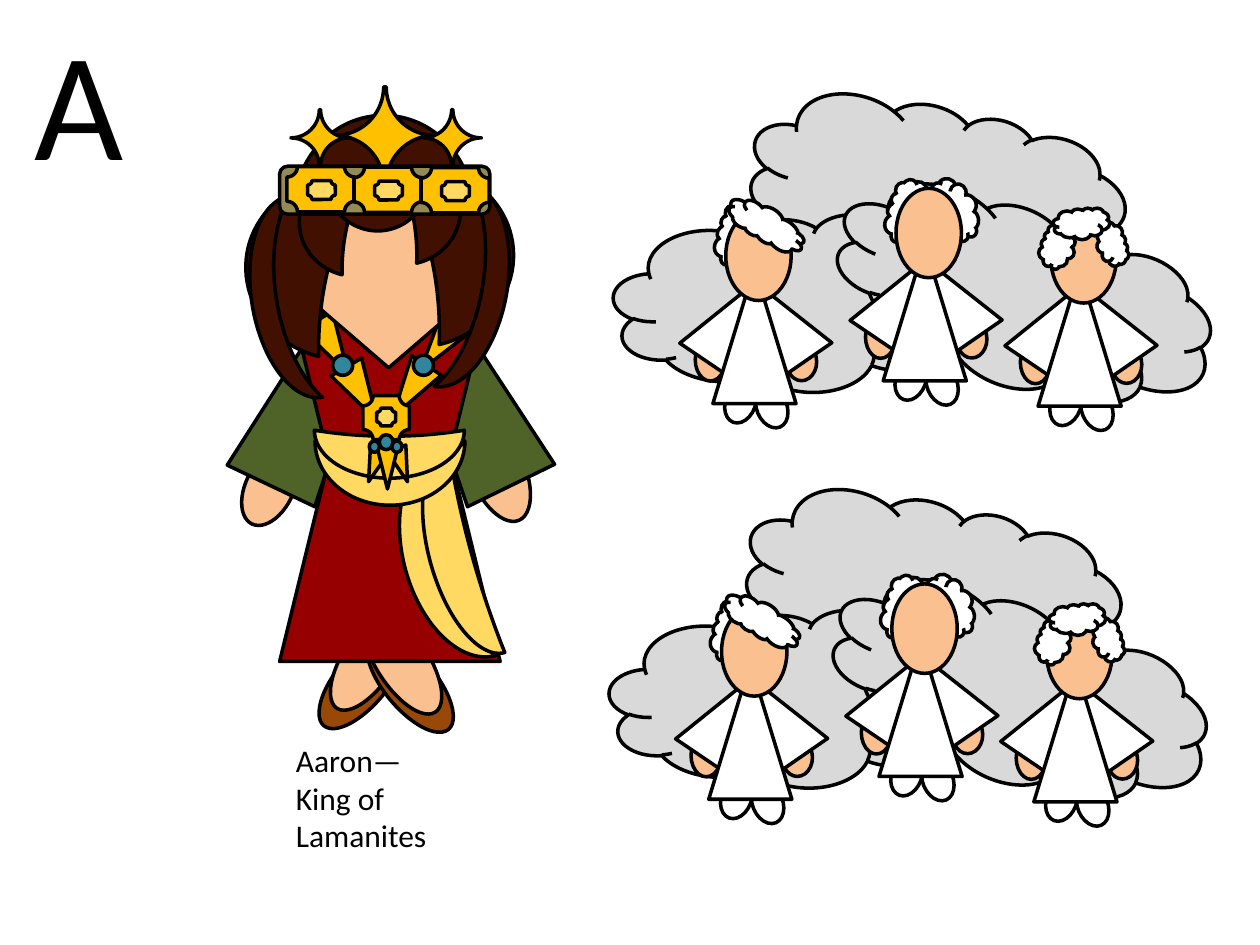
from pptx import Presentation
from pptx import util as u
from pptx.dml.color import RGBColor
from pptx.enum import shapes, text

M = shapes.MSO_SHAPE
OVAL, MOON, CLOUD, PLAQUE = M.OVAL, M.MOON, M.CLOUD, M.PLAQUE
TRAPEZOID, TRIANGLE = M.TRAPEZOID, M.ISOSCELES_TRIANGLE
BLACK, WHITE, GREY, SKIN = "000000", "FFFFFF", "D9D9D9", "FAC090"
HAIR, GOLD, PALE_GOLD, BRONZE = "411001", "FFC000", "FFD961", "948A54"
RED, GREEN, BROWN, BLUE = "960000", "4F6228", "984807", "31859C"

# Each part: shape, colour, left, top, width, height, rotation, adjustment, flipped
LIMBS = [
    (OVAL, SKIN, 131, 265, 46, 27.4, 116),
    (OVAL, BROWN, 172.8, 373.7, 68.4, 29.5, 309.8, None, True),
    (OVAL, SKIN, 177.1, 361.4, 68.4, 29.5, 303.3, None, True),
    (OVAL, BROWN, 200.2, 375.8, 68.4, 29.5, 50.2),
    (OVAL, SKIN, 195.8, 363.6, 68.4, 29.5, 56.7),
    (OVAL, SKIN, 253.4, 253.4, 61.9, 31, 66.7),
]
ROBE = [
    (TRAPEZOID, GREEN, 240.5, 174.2, 55.4, 108.7, 334, 0.248),
    (TRAPEZOID, GREEN, 150.5, 174.2, 55.4, 108.7, 25.4, 0.248),
    (TRAPEZOID, RED, 167.8, 180, 108.7, 79.2, 180, 0.244),
    (TRAPEZOID, RED, 159.8, 257.8, 126, 120.2, 0, 0.244),
]
SASH = [
    (MOON, PALE_GOLD, 231.1, 259.9, 36.7, 121.7, 344.7),
    (MOON, PALE_GOLD, 245.5, 257, 27.4, 121.7, 344.7, 0.875),
    (MOON, PALE_GOLD, 204.5, 227.5, 36.7, 85.7, 270),
    (MOON, PALE_GOLD, 208.8, 216.7, 27.4, 85.7, 270, 0.875),
]
NECKLACE = [
    (TRIANGLE, GOLD, 180, 180.7, 20.2, 35.3, 150),
    (TRIANGLE, GOLD, 196.6, 207.4, 20.2, 35.3, 150),
    (TRIANGLE, GOLD, 240.5, 180, 20.2, 35.3, 216.3),
    (TRIANGLE, GOLD, 223.9, 205.9, 20.2, 35.3, 213.4),
    (PLAQUE, GOLD, 207.4, 226.1, 26.6, 25.2, 0, 0.232),
    (TRIANGLE, GOLD, 208.1, 255.6, 11.5, 20.2, 198.9),
    (TRIANGLE, GOLD, 223.9, 255.6, 11.5, 20.2, 161.5),
    (TRIANGLE, GOLD, 215.3, 254.9, 12.2, 24.5, 180),
    (OVAL, BLUE, 190.1, 203, 11.5, 11.5),
    (OVAL, BLUE, 236.2, 203, 11.5, 11.5),
    (OVAL, BLUE, 216.7, 248.4, 7.9, 8.6),
    (OVAL, BLUE, 211, 252, 5.8, 6.5),
    (OVAL, BLUE, 223.9, 252, 5.8, 6.5),
    (PLAQUE, PALE_GOLD, 215.3, 233.3, 10.8, 10.1, 0, 0.232),
]
FACE_AND_HAIR = [
    (M.REGULAR_PENTAGON, SKIN, 174.2, 102.2, 95.8, 108, 180),
    (MOON, HAIR, 239, 90, 54, 102.2, 347.2, 0.875, True),
    (MOON, HAIR, 258.5, 108, 31, 116.6, 10.5, 0.457, True),
    (MOON, HAIR, 231.1, 87.8, 31.7, 59.8, 347.2, 0.875, True),
    (MOON, HAIR, 141.1, 96.5, 54, 102.2, 13.8, 0.875),
    (MOON, HAIR, 144, 113.8, 31, 116.6, 350.5, 0.457),
    (MOON, HAIR, 171.4, 94.3, 31.7, 59.8, 13.8, 0.875),
    (MOON, HAIR, 192.2, 41.8, 54, 102.2, 90, 0.875),
    (MOON, HAIR, 202.3, 86.4, 31, 59.8, 261.6, 0.875),
]
CROWN_BASE = [
    (PLAQUE, GOLD, 191.5, 49.7, 56.9, 55.4, 0, 0.5),
    (M.ROUNDED_RECTANGLE, BRONZE, 159.8, 95, 120.2, 27.4),
]
CROWN_PANEL = [
    (PLAQUE, GOLD, 164, 95.2, 38.9, 25.9, 0, 0.232),
    (PLAQUE, PALE_GOLD, 175.8, 103.2, 15.8, 10.8, 0, 0.232),
]
CROWN_STAR = [(PLAQUE, GOLD, 166.3, 62.6, 33.1, 32.4, 0, 0.5)]

CLOUDS = [
    (CLOUD, GREY, 426.2, 59.8, 218.9, 110.9, 16.8),
    (CLOUD, GREY, 350.6, 122.4, 223.2, 101.5),
    (CLOUD, GREY, 473, 119.5, 223.2, 101.5, 23.5),
]
# Angel parts are measured from the top left of the robe
ANGEL_BODY = [
    (OVAL, WHITE, 25, 67.7, 17.3, 24.5, 337.4),
    (OVAL, WHITE, 7.2, 64.8, 17.3, 24.5, 20.1),
    (OVAL, SKIN, 42, 43.2, 17.3, 21.6),
    (OVAL, SKIN, -10.1, 40.5, 17.3, 24.5),
    (TRIANGLE, WHITE, 19.4, 0.6, 35.3, 57.6, 325.3),
    (TRIANGLE, WHITE, -5.8, 0.6, 35.3, 57.6, 34.1),
    (TRIANGLE, WHITE, 0, 0, 47.5, 77.8),
]
ANGEL_HEAD = [(OVAL, SKIN, 7.3, -32.2, 37.4, 51.1)]
SIDE_HAIR = (CLOUD, WHITE, -4, -31, 37.4, 25.2, 294)
# Robe left, robe top, hair behind the head, hair in front of it
ANGELS = [
    (504.7, 139.8, [SIDE_HAIR, (CLOUD, WHITE, 22.3, -32.5, 37.4, 25.2, 251.1)], []),
    (407.4, 152.8, [SIDE_HAIR], [(CLOUD, WHITE, 6.6, -34, 48.2, 19.4, 214.2)]),
    (593.2, 154.3, [], [(CLOUD, WHITE, -1.4, -23.2, 25.2, 20.2, 300.3),
                        (CLOUD, WHITE, 29.6, -23.2, 25.2, 17.3, 81),
                        (CLOUD, WHITE, 8.6, -35.4, 32.4, 18)]),
]
# Text, left, top, width, height, size, alignment
LABELS = [
    ("A", 0, 0, 90, 113.8, 88, text.PP_ALIGN.CENTER),
    ("Aaron—King of Lamanites", 162, 419.8, 102.2, 72.7, 18, text.PP_ALIGN.LEFT),
]


def color(value):
    return RGBColor.from_string(value)


def add_part(parent, dx, dy, kind, fill, x, y, w, h, rot=0, adj=None, flip=False):
    sp = parent.shapes.add_shape(kind, u.Pt(x + dx), u.Pt(y + dy), u.Pt(w), u.Pt(h))
    sp.rotation = rot
    if adj is not None:
        sp.adjustments[0] = adj
    if flip:
        sp._element.spPr.xfrm.set("flipH", "1")
    sp.shadow.inherit = False
    sp.fill.solid()
    sp.fill.fore_color.rgb = color(fill)
    sp.line.color.rgb = color(BLACK)
    sp.line.width = u.Pt(2)


def add_parts(parent, parts, dx=0, dy=0):
    for part in parts:
        add_part(parent, dx, dy, *part)


def add_king(s):
    king = s.shapes.add_group_shape()
    for parts in (LIMBS, ROBE, SASH, NECKLACE, FACE_AND_HAIR, CROWN_BASE):
        add_parts(king, parts)
    for i in range(3):
        add_parts(king, CROWN_PANEL, 38.3 * i, 0.3 * i)
    for i in range(2):
        add_parts(king, CROWN_STAR, 75.6 * i)


def add_angels(parent, dx, dy, grouped):
    add_parts(parent, CLOUDS, dx, dy)
    for x, y, back, front in ANGELS:
        angel = parent.shapes.add_group_shape() if grouped else parent
        add_parts(angel, ANGEL_BODY + back + ANGEL_HEAD + front, x + dx, y + dy)


def add_label(s, words, x, y, w, h, size, align):
    tf = s.shapes.add_textbox(u.Pt(x), u.Pt(y), u.Pt(w), u.Pt(h)).text_frame
    tf.word_wrap = True
    tf.auto_size = text.MSO_AUTO_SIZE.SHAPE_TO_FIT_TEXT
    tf.text = words
    p = tf.paragraphs[0]
    p.alignment = align
    f = p.runs[0].font
    f.name, f.size = "Calibri", u.Pt(size)
    f.color.rgb = color(BLACK)


def main():
    prs = Presentation()
    prs.slide_width, prs.slide_height = u.Pt(720), u.Pt(540)
    s = prs.slides.add_slide(prs.slide_layouts[6])
    add_king(s)
    for label in LABELS:
        add_label(s, *label)
    # Upper scene is one group, lower scene has a group per angel
    add_angels(s.shapes.add_group_shape(), 0, 0, False)
    add_angels(s, -2.4, 226.1, True)
    prs.save("out.pptx")


if __name__ == "__main__":
    main()
